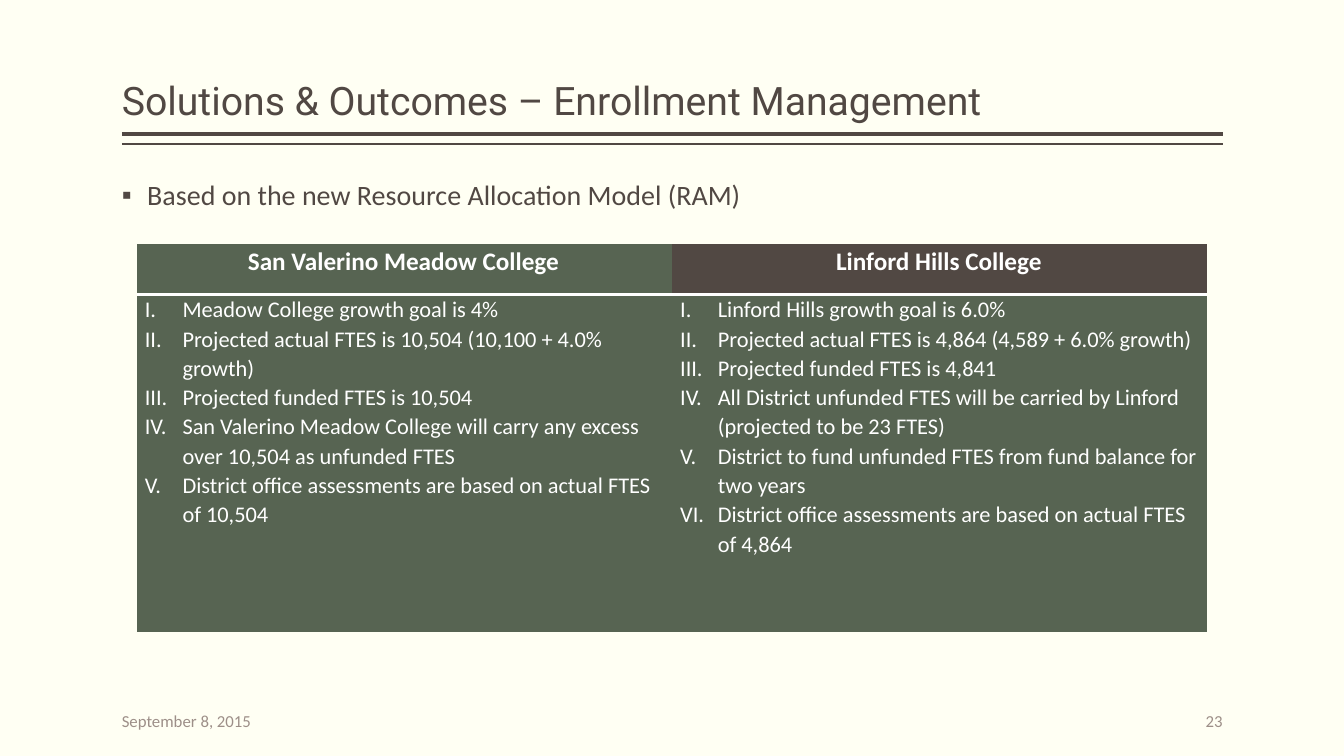
from dataclasses import dataclass

from lxml.etree import SubElement
from pptx import Presentation
from pptx.dml.color import RGBColor
from pptx.enum.shapes import MSO_CONNECTOR
from pptx.enum.text import MSO_ANCHOR, MSO_AUTO_SIZE, PP_ALIGN
from pptx.oxml.ns import qn
from pptx.util import Cm, Pt


@dataclass(frozen=True)
class Theme:
    background: RGBColor = RGBColor(0xFF, 0xFF, 0xF3)
    brown: RGBColor = RGBColor(0x51, 0x48, 0x43)
    green: RGBColor = RGBColor(0x57, 0x64, 0x52)
    muted: RGBColor = RGBColor(0x9D, 0x8F, 0x88)
    white: RGBColor = RGBColor(0xFF, 0xFF, 0xFF)
    title_font: str = "Roboto"
    body_font: str = "Calibri"
    title_size: int = 28
    body_size: int = 20
    header_size: int = 18
    cell_size: int = 16
    footer_size: int = 12


THEME = Theme()
LEFT, RIGHT = 3.07, 30.81
NO_STYLE_NO_GRID = "{2D5ABB26-0587-4C30-8999-92F81FD0307C}"

COLLEGES = {
    "San Valerino Meadow College": [
        "Meadow College growth goal is 4%",
        "Projected actual FTES is 10,504 (10,100 + 4.0% growth)",
        "Projected funded FTES is 10,504",
        "San Valerino Meadow College will carry any excess over 10,504 as unfunded FTES",
        "District office assessments are based on actual FTES of 10,504",
    ],
    "Linford Hills College": [
        "Linford Hills growth goal is 6.0%",
        "Projected actual FTES is 4,864 (4,589 + 6.0% growth)",
        "Projected funded FTES is 4,841",
        "All District unfunded FTES will be carried by Linford (projected to be 23 FTES)",
        "District to fund unfunded FTES from fund balance for two years",
        "District office assessments are based on actual FTES of 4,864",
    ],
}


def place(shape, left, top, width, height):
    shape.left, shape.top = Cm(left), Cm(top)
    shape.width, shape.height = Cm(width), Cm(height)


def format_frame(frame, anchor):
    frame.word_wrap = True
    frame.auto_size = MSO_AUTO_SIZE.NONE
    frame.vertical_anchor = anchor
    frame.margin_left = frame.margin_right = 0
    frame.margin_top = frame.margin_bottom = Cm(0.13)


def format_paragraph(paragraph, size, color, font=THEME.body_font, bold=False,
                     align=PP_ALIGN.LEFT, spacing=1.0):
    paragraph.alignment = align
    paragraph.line_spacing = spacing
    paragraph.font.name = font
    paragraph.font.size = Pt(size)
    paragraph.font.bold = bold
    paragraph.font.color.rgb = color


def add_bullet(paragraph, indent, tag, **attributes):
    """Give a paragraph a hanging indent and a bullet; call before fonts are set."""
    properties = paragraph._p.get_or_add_pPr()
    properties.set("marL", str(Cm(indent)))
    properties.set("indent", str(-Cm(indent)))
    SubElement(properties, qn(tag), attributes)


def add_rule(slide, top, weight):
    rule = slide.shapes.add_connector(
        MSO_CONNECTOR.STRAIGHT, Cm(LEFT), Cm(top), Cm(RIGHT), Cm(top))
    rule.line.color.rgb = THEME.brown
    rule.line.width = Pt(weight)
    SubElement(rule._element.spPr, qn("a:effectLst"))


def set_title(slide, text):
    title = slide.shapes.title
    place(title, LEFT, 0.2, RIGHT - LEFT, 3.05)
    format_frame(title.text_frame, MSO_ANCHOR.BOTTOM)
    title.text_frame.text = text
    format_paragraph(title.text_frame.paragraphs[0], THEME.title_size, THEME.brown,
                     font=THEME.title_font, spacing=0.9)


def set_body(slide, text):
    body = slide.placeholders[1]
    place(body, LEFT, 4.45, 27.97, 13.2)
    format_frame(body.text_frame, MSO_ANCHOR.TOP)
    body.text_frame.text = text
    paragraph = body.text_frame.paragraphs[0]
    add_bullet(paragraph, 0.64, "a:buChar", char="▪")
    format_paragraph(paragraph, THEME.body_size, THEME.brown, spacing=0.9)


def add_footer(slide, text, left, align):
    box = slide.shapes.add_textbox(Cm(left), Cm(17.65), Cm(5.08), Cm(1.02))
    format_frame(box.text_frame, MSO_ANCHOR.MIDDLE)
    box.text_frame.text = text
    format_paragraph(box.text_frame.paragraphs[0], THEME.footer_size, THEME.muted,
                     align=align)


def format_cell(cell, fill):
    cell.fill.solid()
    cell.fill.fore_color.rgb = fill
    cell.margin_left, cell.margin_right = Cm(0.2), Cm(0.25)
    cell.margin_top = cell.margin_bottom = 0


def add_bottom_border(cell, weight):
    properties = cell._tc.get_or_add_tcPr()
    border = properties.makeelement(qn("a:lnB"), {"w": str(Pt(weight))})
    fill = SubElement(border, qn("a:solidFill"))
    SubElement(fill, qn("a:srgbClr"), val=str(THEME.white))
    properties.insert(0, border)


def fill_header(cell, name, fill):
    format_cell(cell, fill)
    add_bottom_border(cell, 2)
    cell.text_frame.text = name
    format_paragraph(cell.text_frame.paragraphs[0], THEME.header_size, THEME.white,
                     bold=True, align=PP_ALIGN.CENTER, spacing=1.07)


def fill_outcomes(cell, outcomes):
    format_cell(cell, THEME.green)
    cell.text_frame.text = "\n".join(outcomes)
    for paragraph in cell.text_frame.paragraphs:
        add_bullet(paragraph, 0.95, "a:buAutoNum", type="romanUcPeriod")
        format_paragraph(paragraph, THEME.cell_size, THEME.white, spacing=1.07)


def add_college_table(slide):
    table = slide.shapes.add_table(
        2, len(COLLEGES), Cm(3.45), Cm(6.15), Cm(26.98), Cm(9.78)).table
    table.first_row = table.horz_banding = False
    table._tbl.tblPr.find(qn("a:tableStyleId")).text = NO_STYLE_NO_GRID
    table.rows[0].height, table.rows[1].height = Cm(1.27), Cm(8.51)
    header_fills = (THEME.green, THEME.brown)
    for column, (name, outcomes) in enumerate(COLLEGES.items()):
        fill_header(table.cell(0, column), name, header_fills[column])
        fill_outcomes(table.cell(1, column), outcomes)


def main():
    presentation = Presentation()
    presentation.slide_width, presentation.slide_height = Cm(33.87), Cm(19.05)
    slide = presentation.slides.add_slide(presentation.slide_layouts[1])
    slide.background.fill.solid()
    slide.background.fill.fore_color.rgb = THEME.background

    add_rule(slide, 3.38, 3)
    add_rule(slide, 3.63, 1)
    set_title(slide, "Solutions & Outcomes – Enrollment Management")
    set_body(slide, "Based on the new Resource Allocation Model (RAM)")
    add_footer(slide, "23", RIGHT - 5.08, PP_ALIGN.RIGHT)
    add_footer(slide, "September 8, 2015", LEFT, PP_ALIGN.LEFT)
    add_college_table(slide)
    presentation.save("out.pptx")


if __name__ == "__main__":
    main()
